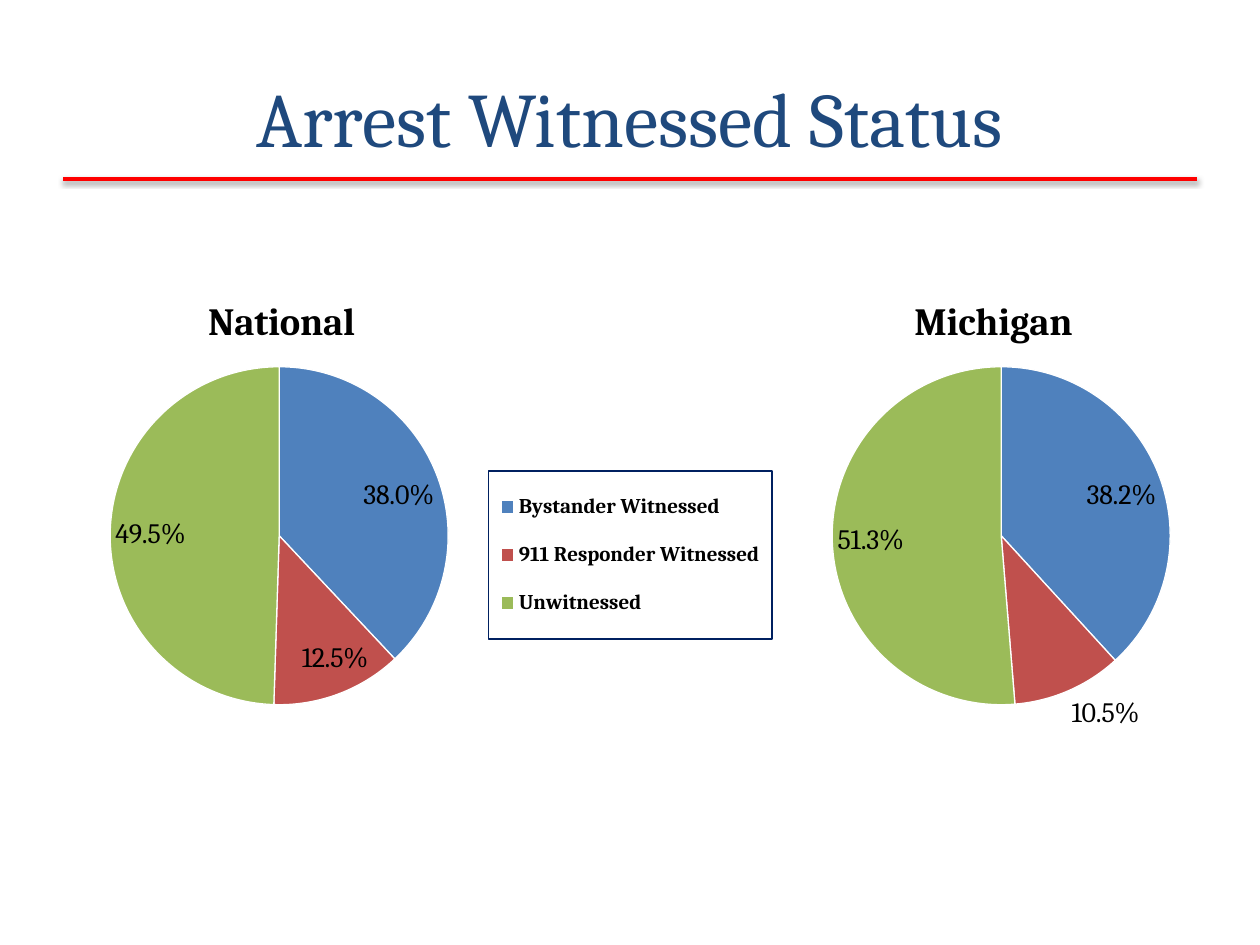
from lxml import etree
from pptx import Presentation
from pptx.chart.data import CategoryChartData
from pptx.dml.color import RGBColor
from pptx.enum.chart import XL_CHART_TYPE as ChartType, XL_LABEL_POSITION as LabelPos
from pptx.enum.chart import XL_LEGEND_POSITION as LegendPos
from pptx.enum.shapes import MSO_CONNECTOR as Connector
from pptx.enum.text import MSO_ANCHOR as Anchor, PP_ALIGN as Align
from pptx.oxml import parse_xml
from pptx.oxml.ns import nsdecls, qn
from pptx.util import Inches, Pt

FONT = "Cambria"
SLICE_COLORS = ["4F81BD", "C0504D", "9BBB59"]
WITNESS_TYPES = ["Bystander Witnessed", "911 Responder Witnessed", "Unwitnessed"]


def rgb(hex_color):
    return RGBColor.from_string(hex_color)


def style_font(font, size, color="000000", bold=False):
    font.name = FONT
    font.size = Pt(size)
    font.bold = bold
    font.color.rgb = rgb(color)


def set_layout(element, index, **settings):
    """Place a chart part by hand, in fractions of the chart area."""
    for old in element.findall(qn("c:layout")):
        element.remove(old)
    layout = etree.Element(qn("c:layout"))
    manual = etree.SubElement(layout, qn("c:manualLayout"))
    for name, value in settings.items():
        etree.SubElement(manual, qn(f"c:{name}")).set("val", str(value))
    element.insert(index, layout)


def add_heading(slide, left, top, width, height):
    # Title text
    heading = slide.shapes.add_textbox(left, top, width, height)
    frame = heading.text_frame
    frame.word_wrap = True
    frame.vertical_anchor = Anchor.MIDDLE
    frame.text = "Arrest Witnessed Status"
    frame.paragraphs[0].alignment = Align.CENTER
    style_font(frame.paragraphs[0].runs[0].font, 44, "1F497D")


def add_rule(slide, left, top, width):
    # Red rule with a soft shadow below it
    rule = slide.shapes.add_connector(Connector.STRAIGHT, left, top, left + width, top)
    rule.line.color.rgb = rgb("FF0000")
    rule.line.width = Pt(2)
    rule._element.spPr.append(parse_xml(
        f'<a:effectLst {nsdecls("a")}>'
        f'<a:outerShdw blurRad="{Pt(3.1)}" dist="{Pt(1.6)}" dir="5400000" rotWithShape="0">'
        '<a:srgbClr val="000000"><a:alpha val="38000"/></a:srgbClr>'
        '</a:outerShdw></a:effectLst>'))


def add_legend(chart):
    chart.has_legend = True
    legend = chart.legend
    legend.position = LegendPos.RIGHT
    legend.include_in_layout = False
    style_font(legend.font, 12, bold=True)
    set_layout(legend._element, 1, xMode="edge", yMode="edge",
               x=0.635, y=0.44, w=0.36, h=0.27)
    border = parse_xml(
        f'<c:spPr {nsdecls("c", "a")}><a:ln w="{Pt(1)}"><a:solidFill>'
        '<a:srgbClr val="002060"/></a:solidFill></a:ln></c:spPr>')
    legend._element.find(qn("c:txPr")).addprevious(border)


def add_pie(slide, left, top, width, height, region, title_x, categories, shares):
    data = CategoryChartData()
    data.categories = categories
    data.add_series("Series 1", shares)
    chart = slide.shapes.add_chart(ChartType.PIE, left, top, width, height, data).chart
    style_font(chart.font, 18)
    chart.has_legend = False

    # Region name above the pie
    chart.has_title = True
    title = chart.chart_title
    title.text_frame.text = region
    style_font(title.text_frame.paragraphs[0].runs[0].font, 22, bold=True)
    set_layout(title._element, 1, xMode="edge", yMode="edge", x=title_x, y=0.15)

    # Pie area and slices
    set_layout(chart._chartSpace.chart.plotArea, 0, layoutTarget="inner",
               xMode="edge", yMode="edge", x=0.095, y=0.273, w=0.548, h=0.542)
    pie = chart.plots[0]
    pie.vary_by_categories = True
    for index, color in enumerate(SLICE_COLORS):
        slice_format = pie.series[0].points[index].format
        slice_format.fill.solid()
        slice_format.fill.fore_color.rgb = rgb(color)
        slice_format.line.color.rgb = rgb("FFFFFF")
        slice_format.line.width = Pt(0.75)

    # Percentage labels
    labels = pie.series[0].data_labels
    labels.show_percentage = True
    labels.show_value = False
    labels.number_format = "0.0%"
    labels.number_format_is_linked = False
    labels.position = LabelPos.BEST_FIT
    style_font(labels.font, 16)
    return chart


def main():
    prs = Presentation()
    prs.slide_width, prs.slide_height = Inches(10), Inches(7.5)
    slide = prs.slides.add_slide(prs.slide_layouts[6])

    add_rule(slide, Inches(0.5), Inches(1.42), Inches(9))
    add_heading(slide, Inches(0.5), Inches(0.3), Inches(9), Inches(1.25))

    chart_top, chart_width, chart_height = Inches(1.56), Inches(6.25), Inches(4.95)
    national = add_pie(slide, Inches(-0.09), chart_top, chart_width, chart_height,
                       "National", 0.27, WITNESS_TYPES, [38, 12.5, 49.5])
    add_legend(national)
    add_pie(slide, Inches(5.64), chart_top, chart_width, chart_height,
            "Michigan", 0.25, ["1", "2", "3"], [38.2, 10.5, 51.3])

    prs.save("out.pptx")


if __name__ == "__main__":
    main()
